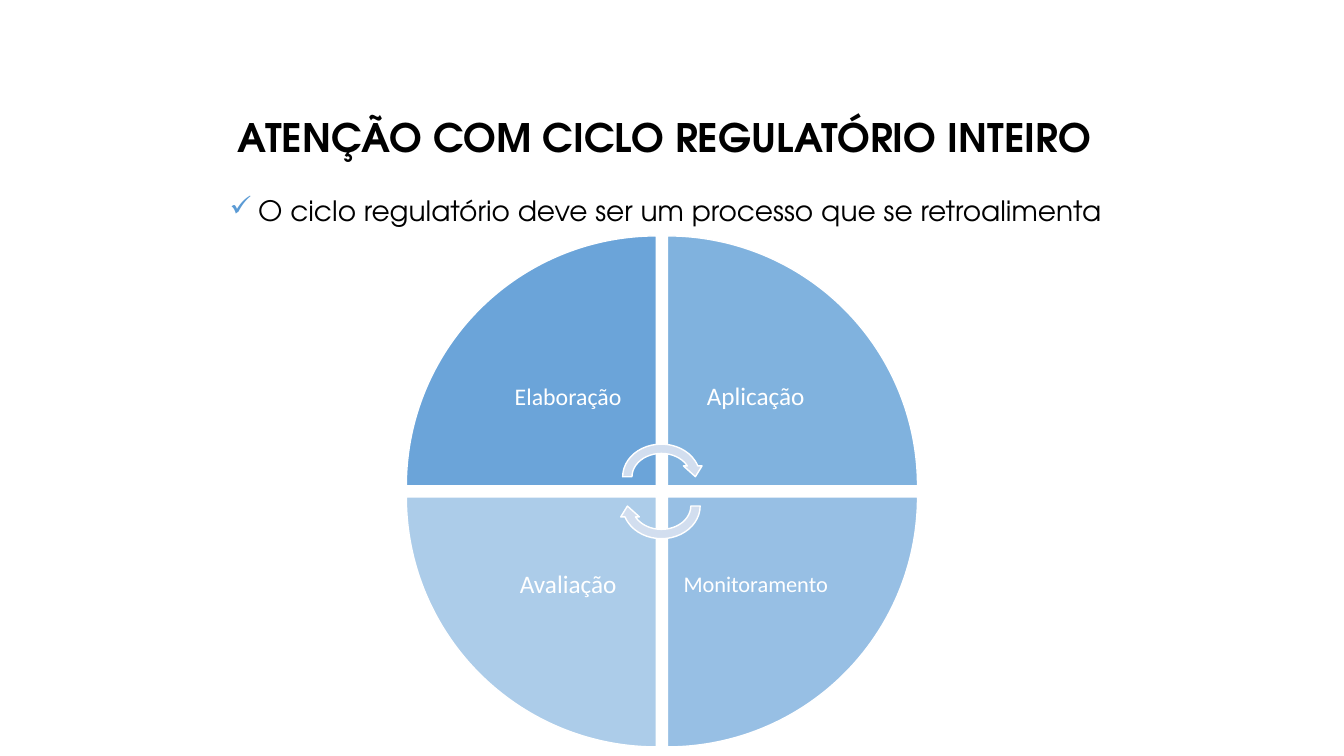
from lxml.etree import SubElement
from pptx import Presentation
from pptx.dml.color import RGBColor
from pptx.enum.shapes import MSO_SHAPE as Shape
from pptx.enum.text import MSO_ANCHOR as Anchor, PP_ALIGN as Align
from pptx.oxml.ns import qn
from pptx.util import Emu, Pt

SCALE = 9144  # EMU in one px, 100 px to the inch
BLUE = RGBColor(0x5B, 0x9B, 0xD5)
PALE = RGBColor(0xD2, 0xDE, 0xEF)
WHITE = RGBColor(0xFF, 0xFF, 0xFF)
BLACK = RGBColor(0, 0, 0)
HEAD_FONT = "TeX Gyre Adventor"
BODY_FONT = "Calibri"

# name, text size, inset, opacity in percent; clockwise from top left
STAGES = [
    ("Elaboração", 17, 13, 90),
    ("Aplicação", 18, 14, 77),
    ("Monitoramento", 16, 12, 63),
    ("Avaliação", 18, 14, 50),
]


def px(*values):
    return [Emu(value * SCALE) for value in values]


def add_text(slide, box, text, size, font, color, align, anchor=Anchor.MIDDLE):
    frame = slide.shapes.add_textbox(*px(*box)).text_frame
    frame.word_wrap = True
    frame.vertical_anchor = anchor
    frame.text = text
    para = frame.paragraphs[0]
    para.alignment = align
    para.line_spacing = 0.9
    style = para.runs[0].font
    style.size, style.name = Pt(size), font
    style.color.rgb = color
    return frame


def add_form(slide, kind, box, turn, color):
    form = slide.shapes.add_shape(kind, *px(*box))
    form.shadow.inherit = False
    form.rotation = turn
    form.fill.solid()
    form.fill.fore_color.rgb = color
    form.line.color.rgb = WHITE
    form.line.width = Pt(1)
    return form


def set_alpha(form, percent):
    tint = form.fill._xPr.find(qn("a:solidFill"))[0]
    SubElement(tint, qn("a:alpha")).set("val", str(percent * 1000))


def add_title(slide, box):
    frame = add_text(slide, box, "ATENÇÃO COM CICLO REGULATÓRIO INTEIRO",
                     28, HEAD_FONT, BLACK, Align.CENTER)
    frame.paragraphs[0].runs[0].font.bold = True


def add_point(slide, box):
    """Add the line of text with its check mark bullet."""
    frame = add_text(slide, box, " ", 20, BODY_FONT, BLACK,
                     Align.JUSTIFY, Anchor.TOP)
    para = frame.paragraphs[0]
    props = para._p.get_or_add_pPr()
    props.set("marL", str(9 * SCALE))
    props.set("indent", "0")
    tint = SubElement(SubElement(props, qn("a:buClr")), qn("a:srgbClr"))
    tint.set("val", str(BLUE))
    SubElement(props, qn("a:buChar")).set("char", "✓")
    run = para.add_run()
    run.text = "O ciclo regulatório deve ser um processo que se retroalimenta"
    run.font.size, run.font.name = Pt(20), HEAD_FONT
    run.font.color.rgb = BLACK


def add_cycle(slide, box):
    """Fill a square box with four wedges and two arrows at its centre."""
    left, top, side, _ = box
    wedge, label = 248, 175
    step = side - wedge
    inner = wedge - label
    cells = [(0, 0), (1, 0), (1, 1), (0, 1)]
    for i, (stage, (col, row)) in enumerate(zip(STAGES, cells)):
        name, size, inset, alpha = stage
        x, y = left + col * step, top + row * step
        form = add_form(slide, Shape.PIE_WEDGE, (x, y, wedge, wedge),
                        90 * i, BLUE)
        set_alpha(form, alpha)
        spot = (x + inner * (1 - col), y + inner * (1 - row), label, label)
        frame = add_text(slide, spot, name, size, BODY_FONT, WHITE,
                         Align.CENTER)
        frame.margin_left, frame.margin_right = px(inset, inset)
        frame.margin_top, frame.margin_bottom = px(inset, inset)

    wide, high, shift = 86, 74, 29
    x = left + (side - wide) // 2
    y = top + (side - high - shift) // 2
    for i in range(2):
        add_form(slide, Shape.CIRCULAR_ARROW,
                 (x, y + i * shift, wide, high), 180 * i, PALE)


def main():
    deck = Presentation()
    deck.slide_width, deck.slide_height = px(1333, 750)
    slide = deck.slides.add_slide(deck.slide_layouts[6])
    add_point(slide, (209, 191, 900, 70))
    add_title(slide, (159, 88, 1000, 102))
    add_cycle(slide, (403, 234, 507, 507))
    deck.save("out.pptx")


if __name__ == "__main__":
    main()
